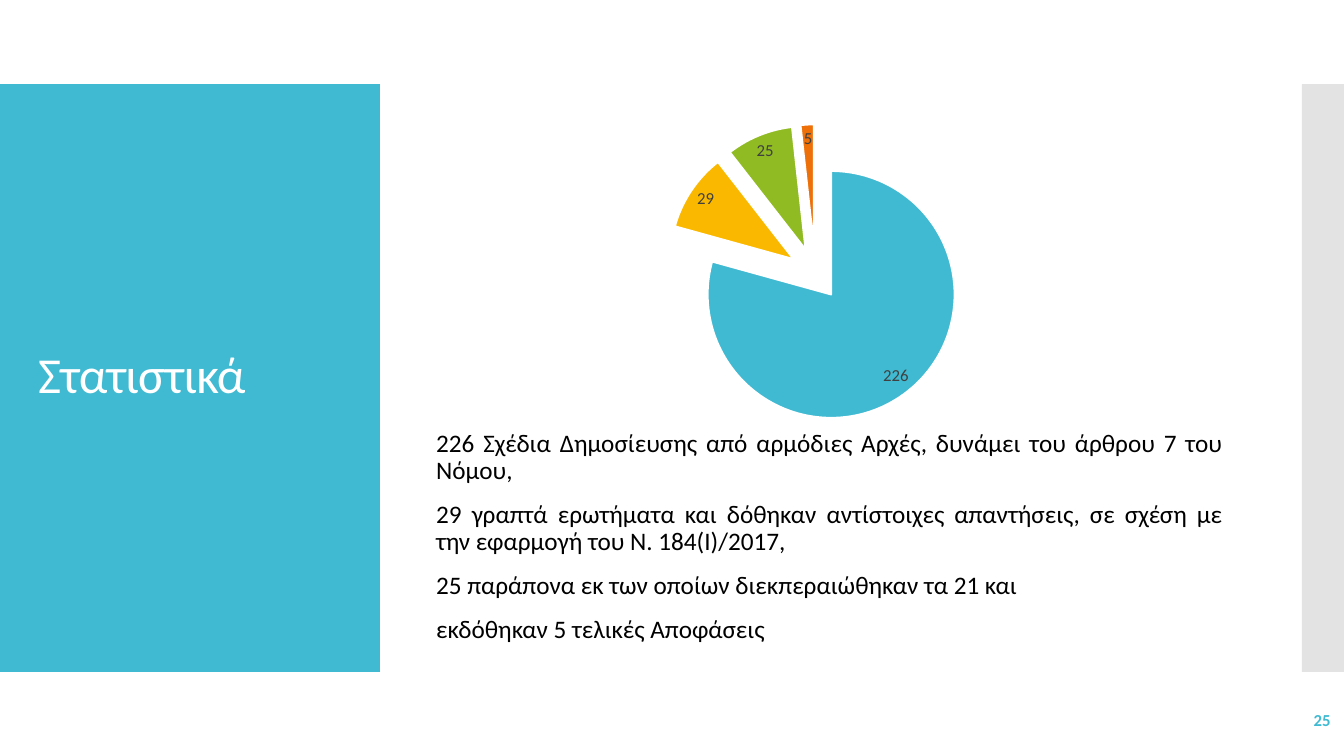
from lxml.etree import SubElement
from pptx import Presentation
from pptx.chart.data import CategoryChartData as Data
from pptx.dml.color import RGBColor as RGB
from pptx.enum.chart import XL_CHART_TYPE as Chart, XL_LABEL_POSITION as Pos
from pptx.enum.shapes import MSO_SHAPE as Shape
from pptx.enum.text import MSO_ANCHOR as Anchor, MSO_AUTO_SIZE as Fit, PP_ALIGN as Align
from pptx.oxml import parse_xml
from pptx.oxml.ns import nsdecls, qn
from pptx.util import Pt

FONT = "Calibri"
TEAL = RGB(0x40, 0xBA, 0xD2)
GOLD = RGB(0xFA, 0xB9, 0x00)
GREEN = RGB(0x90, 0xBB, 0x23)
RUST = RGB(0xEE, 0x70, 0x08)
GREY = RGB(0xC8, 0xC8, 0xC8)
DARK = RGB(0x40, 0x40, 0x40)
BLACK = RGB(0, 0, 0)
WHITE = RGB(0xFF, 0xFF, 0xFF)

COUNTS = (226, 29, 25, 5)
HUES = (TEAL, GOLD, GREEN, RUST)
LINES = (
    "226 Σχέδια Δημοσίευσης από αρμόδιες Αρχές, δυνάμει του άρθρου 7 του Νόμου,",
    "29 γραπτά ερωτήματα και δόθηκαν αντίστοιχες απαντήσεις, σε σχέση με την εφαρμογή του Ν. 184(Ι)/2017,",
    "25 παράπονα εκ των οποίων διεκπεραιώθηκαν τα 21 και",
    "εκδόθηκαν 5 τελικές Αποφάσεις",
)


def style(font, size, color, bold=False):
    font.name = FONT
    font.size = Pt(size)
    font.bold = bold
    font.color.rgb = color


def add_panel(slide, left, width, color, alpha=100):
    panel = slide.shapes.add_shape(Shape.RECTANGLE, Pt(left), Pt(60), Pt(width), Pt(420))
    panel.shadow.inherit = False
    panel.line.fill.background()
    panel.fill.solid()
    panel.fill.fore_color.rgb = color
    if alpha < 100:
        tint = panel.fill._xPr.find(".//" + qn("a:srgbClr"))
        SubElement(tint, qn("a:alpha")).set("val", str(alpha * 1000))


def set_title(slide, text):
    title = slide.shapes.title
    title.left, title.top, title.width, title.height = Pt(20), Pt(88.5), Pt(232), Pt(362)
    frame = title.text_frame
    frame.text = text
    frame.word_wrap = True
    frame.auto_size = Fit.NONE
    frame.vertical_anchor = Anchor.MIDDLE
    para = frame.paragraphs[0]
    para.alignment = Align.LEFT
    para.line_spacing = 0.9
    run = para.runs[0]
    style(run.font, 36, WHITE)
    run.font._element.set("spc", "-60")
    slide.shapes._spTree.append(title._element)


def add_text(slide, box, lines, size, color, align, anchor, bold=False):
    frame = slide.shapes.add_textbox(*map(Pt, box)).text_frame
    frame.word_wrap = True
    frame.vertical_anchor = anchor
    frame.text = "\n".join(lines)
    for i, para in enumerate(frame.paragraphs):
        para.alignment = align
        para.line_spacing = 0.9
        para.space_before = Pt(12 if i else 0)
        style(para.runs[0].font, size, color, bold)


def add_pie(slide, box):
    data = Data()
    data.categories = [str(i + 1) for i in range(len(COUNTS))]
    data.add_series("Series 1", COUNTS)
    chart = slide.shapes.add_chart(Chart.PIE, *map(Pt, box), data).chart
    chart.has_legend = False
    chart.has_title = False
    style(chart.font, 10, BLACK)
    plot = chart.plots[0]
    plot.vary_by_categories = True
    series = plot.series[0]
    for i, hue in enumerate(HUES):
        form = series.points[i].format
        form.fill.solid()
        form.fill.fore_color.rgb = hue
        form.line.color.rgb = WHITE
        form.line.width = Pt(1.5)
    burst = parse_xml(f'<c:explosion {nsdecls("c")} val="21"/>')
    series._element.find(qn("c:dPt")).addprevious(burst)
    labels = series.data_labels
    labels.show_value = True
    labels.show_percentage = False
    labels.position = Pos.BEST_FIT
    style(labels.font, 12, DARK)
    area = chart._chartSpace.chart.plotArea
    old = area.find(qn("c:layout"))
    if old is not None:
        area.remove(old)
    parts = "".join(
        f'<c:{tag} val="{val}"/>'
        for tag, val in (("layoutTarget", "inner"), ("xMode", "edge"), ("yMode", "edge"),
                         ("x", 0.26), ("y", 0.12), ("w", 0.48), ("h", 0.82)))
    area.insert(0, parse_xml(
        f'<c:layout {nsdecls("c")}><c:manualLayout>{parts}</c:manualLayout></c:layout>'))


def main():
    deck = Presentation()
    deck.slide_width, deck.slide_height = Pt(960), Pt(540)
    slide = deck.slides.add_slide(deck.slide_layouts[5])
    add_panel(slide, 0, 271.4, TEAL)
    add_panel(slide, 930, 30, GREY, 50)
    set_title(slide, "Στατιστικά")
    add_text(slide, (304.5, 304, 576, 167), LINES, 18, BLACK, Align.JUSTIFY, Anchor.TOP)
    add_text(slide, (837.5, 500.5, 120, 29), ["25"], 12, TEAL, Align.RIGHT, Anchor.MIDDLE, True)
    add_pie(slide, (360, 57, 445, 261.5))
    deck.save("out.pptx")


if __name__ == "__main__":
    main()
